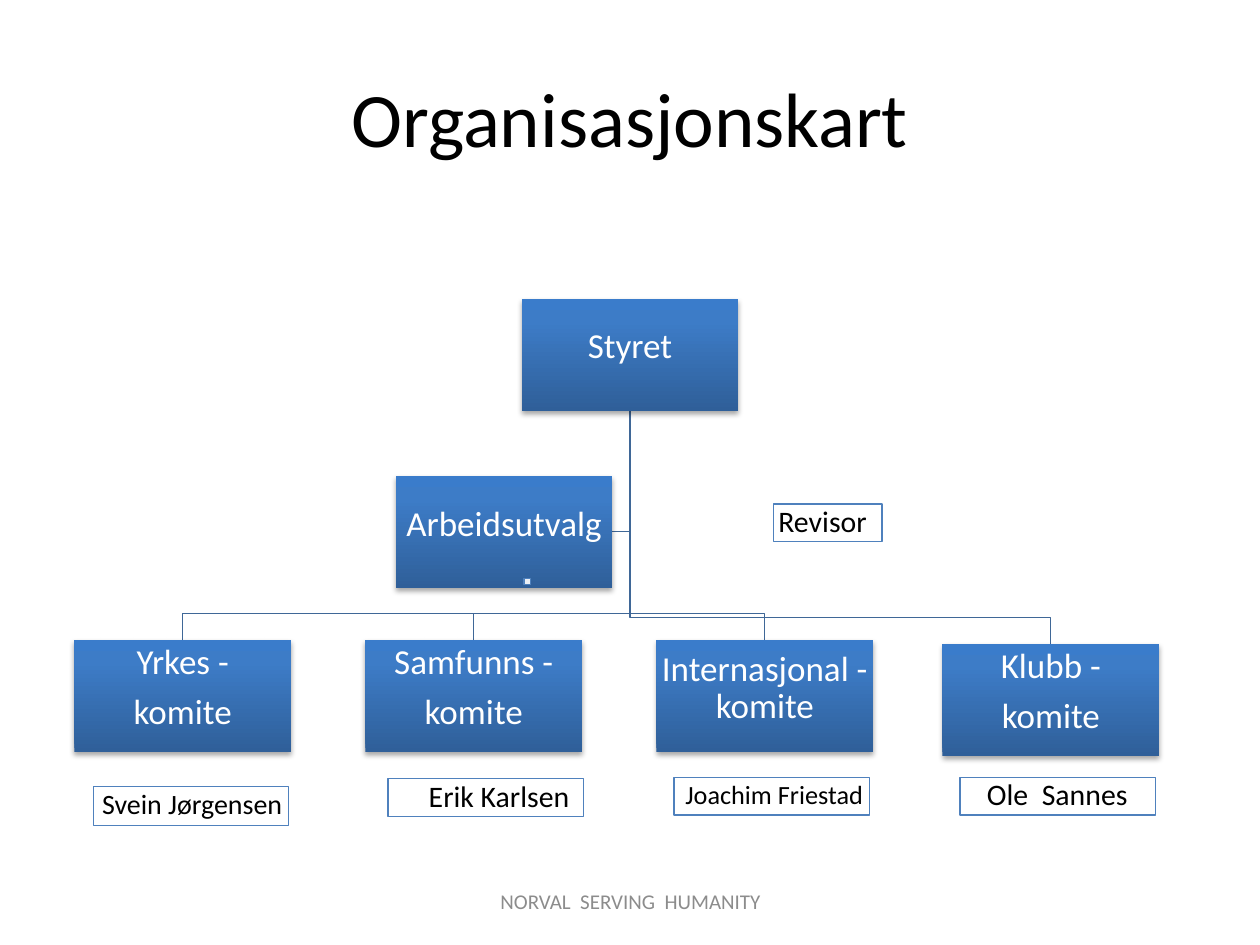
from lxml import etree
from pptx import Presentation
from pptx import util as u
from pptx.dml.color import RGBColor
from pptx.enum import shapes, text
from pptx.oxml import parse_xml
from pptx.oxml.ns import nsdecls, qn

COLORS = {
    "black": "000000", "white": "FFFFFF", "footer": "8C8C8C",
    "connector": "3F6797", "border": "4F81BD",
    "box_bottom": "2F5F99", "box_middle": "3D7CC7", "box_top": "3A7CCB",
}
FONT = "Calibri"
BOX_WIDTH, BOX_HEIGHT = 1.72, 0.89
TRUNK_X, BOARD_TOP = 5, 2.37
BOARD_BOTTOM = BOARD_TOP + BOX_HEIGHT
ELBOW_RISE = 0.21
BOX_INSETS = (0.01, 0.01, 0.01, 0.13)

# left, top, lines of text
COMMITTEES = [
    (0.59, 5.08, ["Yrkes -", "komite"]),
    (2.9, 5.08, ["Samfunns -", "komite"]),
    (5.21, 5.08, ["Internasjonal - komite"]),
    (7.48, 5.11, ["Klubb -", "komite"]),
]
# left, top, width, height, name, size, right inset
LABELS = [
    (6.14, 4, 0.86, 0.3, "Revisor", 17, 0.12),
    (0.74, 6.24, 1.55, 0.31, "Svein Jørgensen", 16, 0.05),
    (3.08, 6.18, 1.55, 0.3, "Erik Karlsen", 17, 0.11),
    (5.35, 6.17, 1.55, 0.3, "Joachim Friestad", 15, 0.05),
    (7.62, 6.17, 1.55, 0.3, "Ole  Sannes", 17, 0.22),
]


def rgb(name):
    return RGBColor.from_string(COLORS[name])


class OrgChart:
    """Draws the chart's elements on one slide; lengths are in inches."""

    def __init__(self, slide):
        self.slide = slide

    def set_text(self, shape, lines, size, color, align=text.PP_ALIGN.CENTER,
                 insets=(0.1, 0.05, 0.1, 0.05), line_spacing=1.0):
        frame = shape.text_frame
        frame.word_wrap = True
        frame.vertical_anchor = text.MSO_ANCHOR.MIDDLE
        (frame.margin_left, frame.margin_top,
         frame.margin_right, frame.margin_bottom) = map(u.Inches, insets)
        frame.text = "\n".join(lines)
        for paragraph in frame.paragraphs:
            paragraph.alignment = align
            paragraph.line_spacing = line_spacing
            font = paragraph.runs[0].font
            font.name, font.size = FONT, u.Pt(size)
            font.color.rgb = rgb(color)
        for paragraph in frame.paragraphs[:-1]:
            paragraph.space_after = u.Pt(0.35 * size)

    def text_box(self, left, top, width, height, words, size, color):
        shape = self.slide.shapes.add_textbox(
            *map(u.Inches, (left, top, width, height)))
        self.set_text(shape, [words], size, color)

    def rectangle(self, left, top, width, height):
        shape = self.slide.shapes.add_shape(
            shapes.MSO_SHAPE.RECTANGLE,
            *map(u.Inches, (left, top, width, height)))
        shape.shadow.inherit = False
        return shape

    def box(self, left, top, lines):
        """Gradient box with a soft shadow, for a body of the club."""
        shape = self.rectangle(left, top, BOX_WIDTH, BOX_HEIGHT)
        shape.line.fill.background()
        stops = "".join(
            f'<a:gs pos="{position}"><a:srgbClr val="{COLORS[name]}"/></a:gs>'
            for position, name in ((0, "box_bottom"), (80000, "box_middle"),
                                   (100000, "box_top")))
        properties = shape.element.spPr
        properties.find(qn("a:prstGeom")).addnext(parse_xml(
            f'<a:gradFill {nsdecls("a")} rotWithShape="1">'
            f'<a:gsLst>{stops}</a:gsLst>'
            '<a:lin ang="16200000" scaled="0"/></a:gradFill>'))
        properties.find(qn("a:effectLst")).append(parse_xml(
            f'<a:outerShdw {nsdecls("a")} blurRad="{u.Pt(3.1)}" '
            f'dist="{u.Pt(1.8)}" dir="5400000" rotWithShape="0">'
            f'<a:srgbClr val="{COLORS["black"]}"><a:alpha val="35000"/>'
            '</a:srgbClr></a:outerShdw>'))
        self.set_text(shape, lines, 20, "white", insets=BOX_INSETS,
                      line_spacing=0.9)

    def frame(self, left, top, width, height):
        """Outlined rectangle with a nearly opaque white fill."""
        shape = self.rectangle(left, top, width, height)
        shape.fill.solid()
        shape.fill.fore_color.rgb = rgb("white")
        fill = shape.element.spPr.find(qn("a:solidFill"))
        color = fill.find(qn("a:srgbClr"))
        etree.SubElement(color, qn("a:alpha")).set("val", "90000")
        shape.line.color.rgb = rgb("border")
        shape.line.width = u.Pt(0.75)
        return shape

    def label(self, left, top, width, height, name, size, right_inset):
        shape = self.frame(left, top, width, height)
        self.set_text(shape, [name], size, "black", text.PP_ALIGN.RIGHT,
                      (0.02, 0.01, right_inset, 0.01), 0.9)

    def branch(self, *points):
        """Open line with square corners from the board to another box."""
        start, *rest = [tuple(map(u.Inches, point)) for point in points]
        builder = self.slide.shapes.build_freeform(*start)
        builder.add_line_segments(rest, close=False)
        shape = builder.convert_to_shape()
        shape.shadow.inherit = False
        shape.fill.background()
        shape.line.color.rgb = rgb("connector")
        shape.line.width = u.Pt(0.75)


def main():
    presentation = Presentation()
    presentation.slide_width = u.Inches(10)
    presentation.slide_height = u.Inches(7.5)
    slide = presentation.slides.add_slide(presentation.slide_layouts[6])
    chart = OrgChart(slide)

    chart.text_box(0.5, 0.3, 9, 1.25, "Organisasjonskart", 44, "black")

    trunk_start = (TRUNK_X, BOARD_BOTTOM)
    chart.branch(trunk_start, (TRUNK_X, 4.22), (4.86, 4.22))
    for left, top, _ in COMMITTEES:
        center, elbow = left + BOX_WIDTH / 2, top - ELBOW_RISE
        chart.branch(trunk_start, (TRUNK_X, elbow), (center, elbow),
                     (center, top))

    chart.box(TRUNK_X - BOX_WIDTH / 2, BOARD_TOP, ["Styret"])
    for committee in COMMITTEES:
        chart.box(*committee)
    for label in LABELS:
        chart.label(*label)
    chart.box(3.14, 3.78, ["Arbeidsutvalg"])
    chart.frame(4.16, 4.59, 0.05, 0.05)

    chart.text_box(3.42, 6.95, 3.17, 0.4, "NORVAL  SERVING  HUMANITY", 12,
                   "footer")
    presentation.save("out.pptx")


if __name__ == "__main__":
    main()
